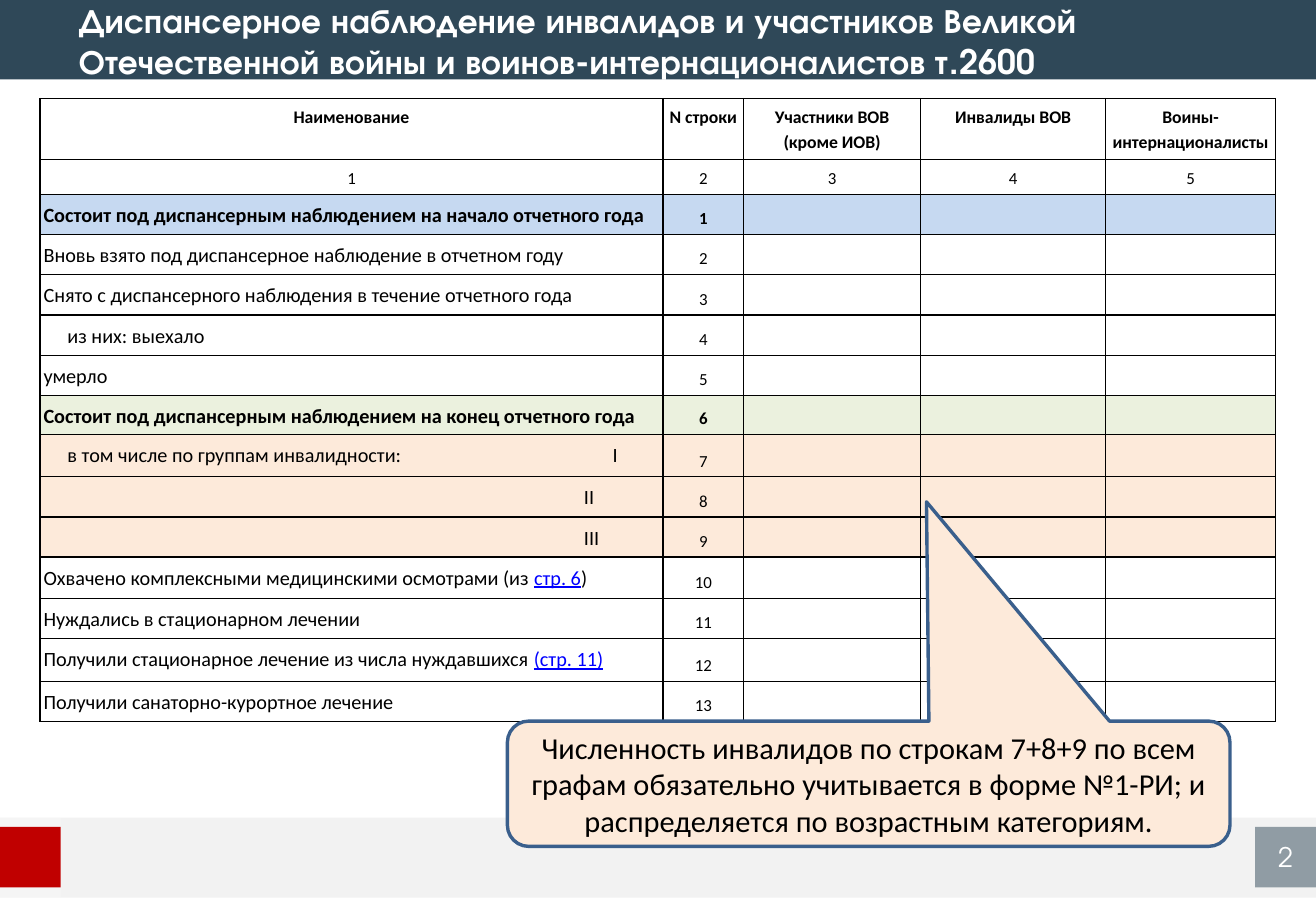
import pptx
import pptx.dml.color
import pptx.enum.shapes
import pptx.enum.text
import pptx.oxml
import pptx.oxml.ns
import pptx.util
from lxml import etree

Cm = pptx.util.Cm
Pt = pptx.util.Pt
RGBColor = pptx.dml.color.RGBColor
Shape = pptx.enum.shapes.MSO_SHAPE
Align = pptx.enum.text.PP_ALIGN
Anchor = pptx.enum.text.MSO_ANCHOR
qn = pptx.oxml.ns.qn

NAVY = RGBColor(0x2F, 0x48, 0x58)
RED = RGBColor(0xC0, 0x00, 0x00)
GREY = RGBColor(0xF2, 0xF2, 0xF2)
WHITE = RGBColor(0xFF, 0xFF, 0xFF)
BLACK = RGBColor(0x00, 0x00, 0x00)
LINK_BLUE = RGBColor(0x00, 0x00, 0xFF)
ROW_BLUE = RGBColor(0xC6, 0xD9, 0xF1)
ROW_GREEN = RGBColor(0xEB, 0xF1, 0xDE)
PEACH = RGBColor(0xFD, 0xEA, 0xDA)
CALLOUT_LINE = RGBColor(0x3A, 0x5F, 0x8C)

HEADING_FONT = "TeX Gyre Adventor"
BODY_FONT = "Calibri"
SLIDE_HEIGHT = 19.05
SLIDE_WIDTH = SLIDE_HEIGHT * 13 / 9  # A4 slide format

TITLE = ("Диспансерное наблюдение инвалидов и участников Великой "
         "Отечественной войны и воинов-интернационалистов т.2600")
NOTE = ("Численность инвалидов по строкам 7+8+9 по всем графам обязательно "
        "учитывается в форме №1-РИ; и распределяется по возрастным категориям.")
HEADERS = ["Наименование", "N строки", "Участники ВОВ (кроме ИОВ)",
           "Инвалиды ВОВ", "Воины-интернационалисты"]
COLUMN_WIDTHS = [13.02, 1.69, 3.7, 3.87, 3.55]
HEADER_HEIGHTS = [1.28, 0.73]
GROUP_INDENT = 11.3
# label parts (the second part is a reference), indent, fill, bold, height
INDICATORS = [
    (["Состоит под диспансерным наблюдением на начало отчетного года"],
     0, ROW_BLUE, True, 0.83),
    (["Вновь взято под диспансерное наблюдение в отчетном году"], 0, None, False, 0.84),
    (["Снято с диспансерного наблюдения в течение отчетного года"], 0, None, False, 0.85),
    (["из них: выехало"], 0.5, None, False, 0.84),
    (["умерло"], 0, None, False, 0.84),
    (["Состоит под диспансерным наблюдением на конец отчетного года"],
     0, ROW_GREEN, True, 0.82),
    (["в том числе по группам инвалидности:\tI"], 0.5, PEACH, False, 0.88),
    (["II"], GROUP_INDENT, PEACH, False, 0.84),
    (["III"], GROUP_INDENT, PEACH, False, 0.84),
    (["Охвачено комплексными медицинскими осмотрами (из ", "стр. 6", ")"],
     0, None, False, 0.86),
    (["Нуждались в стационарном лечении"], 0, None, False, 0.84),
    (["Получили стационарное лечение из числа нуждавшихся ", "(стр. 11)"],
     0, None, False, 0.9),
    (["Получили санаторно-курортное лечение"], 0, None, False, 0.84),
]


def format_run(run, font, size, color, bold=False):
    run.font.name = font
    run.font.size = Pt(size)
    run.font.color.rgb = color
    run.font.bold = bold


def add_block(slide, shape_type, left, top, width, height, fill, opacity=100):
    block = slide.shapes.add_shape(shape_type, Cm(left), Cm(top), Cm(width), Cm(height))
    block.shadow.inherit = False
    block.fill.solid()
    block.fill.fore_color.rgb = fill
    block.line.fill.background()
    if opacity < 100:
        color = block.fill._xPr.find(".//" + qn("a:srgbClr"))
        etree.SubElement(color, qn("a:alpha"), val=str(opacity * 1000))
    return block


def write_centred(block, text, font, size, color):
    frame = block.text_frame
    frame.word_wrap = True
    frame.vertical_anchor = Anchor.MIDDLE
    frame.text = text
    frame.paragraphs[0].alignment = Align.CENTER
    format_run(frame.paragraphs[0].runs[0], font, size, color)


def add_frame(slide):
    """Draw the heading band, the footer and the page number."""
    add_block(slide, Shape.RECTANGLE, 0, 17.1, SLIDE_WIDTH, 1.67, GREY)
    add_block(slide, Shape.RECTANGLE, 0, 0, SLIDE_WIDTH, 1.66, NAVY)
    add_block(slide, Shape.RECTANGLE, 0, 17.1, 1.27, 1.67, WHITE, 30)
    add_block(slide, Shape.RECTANGLE, 0, 17.29, 1.27, 1.27, RED)
    page = add_block(slide, Shape.RECTANGLE, SLIDE_WIDTH - 1.27, 17.29, 1.27, 1.27, NAVY, 50)
    write_centred(page, "2", HEADING_FONT, 16, WHITE)


def place_title(slide):
    title = slide.shapes.title
    slide.shapes._spTree.append(title._element)  # in front of the band
    title.left, title.top, title.width, title.height = Cm(1.65), Cm(0), Cm(24.3), Cm(1.66)
    frame = title.text_frame
    frame.text = TITLE
    frame.word_wrap = True
    frame.auto_size = pptx.enum.text.MSO_AUTO_SIZE.NONE
    frame.vertical_anchor = Anchor.TOP
    frame.margin_left = frame.margin_right = frame.margin_top = frame.margin_bottom = 0
    frame.paragraphs[0].alignment = Align.LEFT
    run = frame.paragraphs[0].runs[0]
    format_run(run, HEADING_FONT, 20, WHITE, True)
    run.font._element.set("spc", "20")


def style_cell(cell, fill):
    cell.margin_left = cell.margin_right = Cm(0.07)
    cell.margin_top = cell.margin_bottom = Cm(0.11)
    properties = cell._tc.get_or_add_tcPr()
    for side in ("a:lnL", "a:lnR", "a:lnT", "a:lnB"):
        border = etree.SubElement(properties, qn(side), w=str(Pt(1)))
        solid = etree.SubElement(border, qn("a:solidFill"))
        etree.SubElement(solid, qn("a:srgbClr"), val=str(BLACK))
    if fill is None:
        cell.fill.background()
    else:
        cell.fill.solid()
        cell.fill.fore_color.rgb = fill


def fill_cell(cell, parts, size, bold=False, fill=None, align=Align.CENTER,
              anchor=Anchor.TOP, indent=0):
    style_cell(cell, fill)
    cell.vertical_anchor = anchor
    paragraph = cell.text_frame.paragraphs[0]
    paragraph.alignment = align
    paragraph.line_spacing = 1.15
    properties = paragraph._p.get_or_add_pPr()
    if indent:
        properties.set("marL", str(Cm(indent)))
    if "\t" in parts[0]:
        tabs = etree.SubElement(properties, qn("a:tabLst"))
        etree.SubElement(tabs, qn("a:tab"), pos=str(Cm(GROUP_INDENT + 0.1)), algn="l")
    for index, part in enumerate(parts):
        run = paragraph.add_run()
        run.text = part
        is_reference = index == 1
        format_run(run, BODY_FONT, size, LINK_BLUE if is_reference else BLACK, bold)
        run.font.underline = is_reference


def leave_cell_empty(cell, fill):
    style_cell(cell, fill)
    etree.SubElement(cell.text_frame.paragraphs[0]._p, qn("a:endParaRPr"), sz="1000")


def add_indicator_table(slide):
    heights = HEADER_HEIGHTS + [indicator[-1] for indicator in INDICATORS]
    table = slide.shapes.add_table(
        len(heights), len(HEADERS), Cm(0.84), Cm(2.06),
        Cm(sum(COLUMN_WIDTHS)), Cm(sum(heights))).table
    table.first_row = table.horz_banding = False
    for column, width in zip(table.columns, COLUMN_WIDTHS):
        column.width = Cm(width)
    for row, height in zip(table.rows, heights):
        row.height = Cm(height)
    for column, header in enumerate(HEADERS):
        fill_cell(table.cell(0, column), [header], 10.5, bold=True)
        fill_cell(table.cell(1, column), [str(column + 1)], 10)
    for number, (parts, indent, fill, bold, _) in enumerate(INDICATORS, 1):
        label, line_number, *values = table.rows[number + 1].cells
        fill_cell(label, parts, 12, bold, fill, Align.LEFT, indent=indent)
        fill_cell(line_number, [str(number)], 10, bold, fill, anchor=Anchor.BOTTOM)
        for value in values:
            leave_cell_empty(value, fill)


def add_note(slide):
    note = add_block(slide, Shape.ROUNDED_RECTANGULAR_CALLOUT, 10.61, 15.08, 15.11, 2.62, PEACH)
    note.adjustments[0] = 0.08
    note.adjustments[1] = -2.25
    note.adjustments[2] = 0.17
    note.line.color.rgb = CALLOUT_LINE
    note.line.width = Pt(2)
    write_centred(note, NOTE, BODY_FONT, 18, BLACK)


def main():
    presentation = pptx.Presentation()
    presentation.slide_width = Cm(SLIDE_WIDTH)
    presentation.slide_height = Cm(SLIDE_HEIGHT)
    slide = presentation.slides.add_slide(presentation.slide_layouts[5])
    add_frame(slide)
    place_title(slide)
    add_indicator_table(slide)
    add_note(slide)
    presentation.save("out.pptx")


if __name__ == "__main__":
    main()
